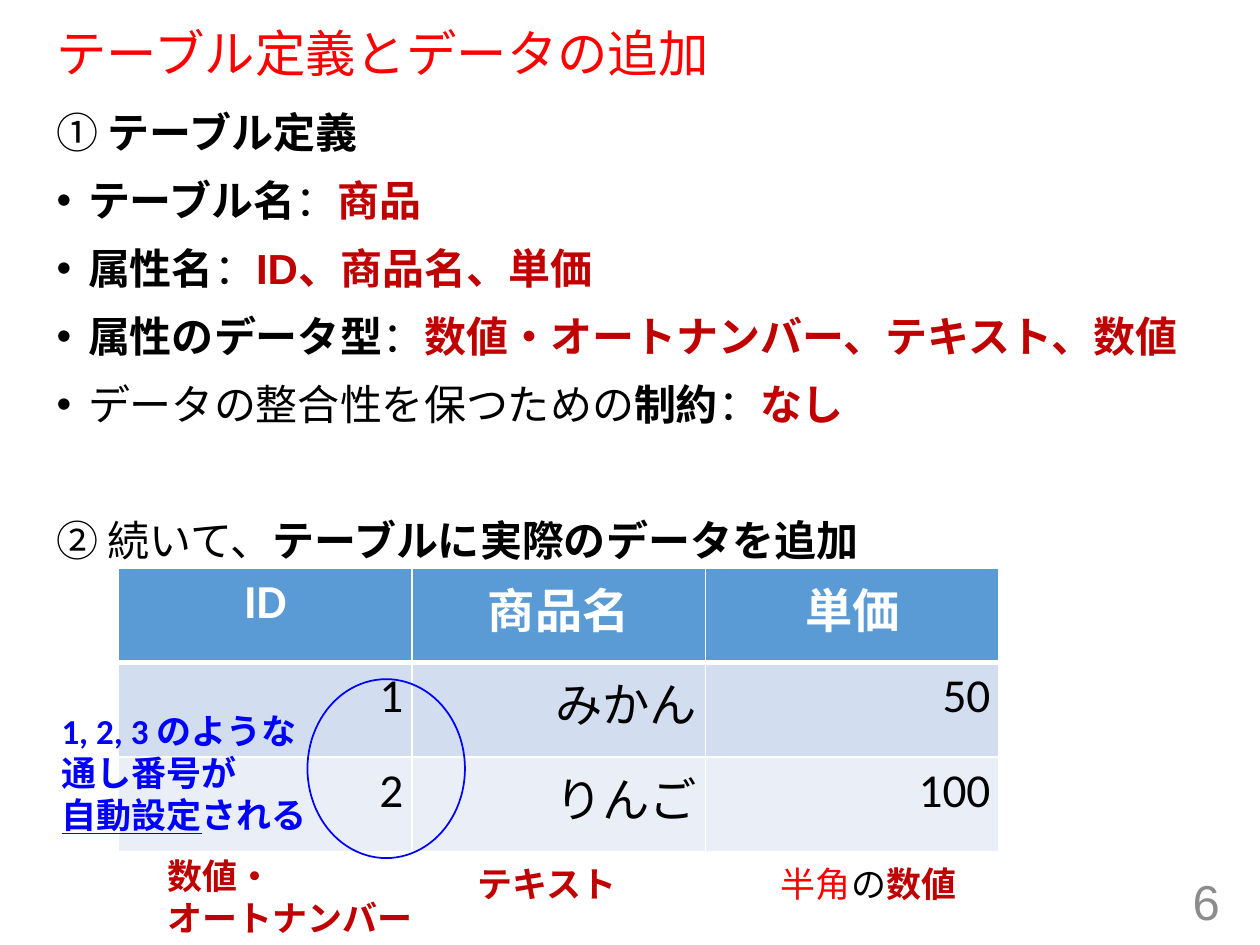
from pptx import Presentation
from pptx.dml.color import RGBColor
from pptx.enum.shapes import MSO_SHAPE
from pptx.enum.text import MSO_ANCHOR, PP_ALIGN
from pptx.oxml import parse_xml
from pptx.oxml.ns import nsdecls
from pptx.util import Inches, Pt

BLACK, RED, DARK, BLUE, WHITE = "000000", "FF0000", "C00000", "0000FF", "FFFFFF"


def color(code):
    return RGBColor.from_string(code)


def write(para, parts, size, face):
    """Add runs given as (text, colour, bold)."""
    for text, code, bold in parts:
        run = para.add_run()
        run.text = text
        font = run.font
        font.size, font.name, font.bold = Pt(size), face, bold
        font.color.rgb = color(code)


deck = Presentation()
deck.slide_width, deck.slide_height = Inches(10), Inches(7.5)
slide = deck.slides.add_slide(deck.slide_layouts[6])
shapes = slide.shapes

# Title
title = shapes.add_textbox(Inches(0.35), Inches(0.19), Inches(9.25), Inches(0.51))
frame = title.text_frame
frame.word_wrap = True
frame.vertical_anchor = MSO_ANCHOR.MIDDLE
para = frame.paragraphs[0]
para.line_spacing = 0.9
write(para, [("テーブル定義とデータの追加", RED, False)], 28.8, "Arial")

# Body: (bulleted, space before, runs)
colon = ("：", BLACK, False)
lines = [
    (False, 10, [("① ", BLACK, False), ("テーブル定義", BLACK, True)]),
    (True, 10, [("テーブル名", BLACK, True), colon, ("商品", DARK, True)]),
    (True, 10, [("属性名", BLACK, True), colon, ("ID、商品名、単価", DARK, True)]),
    (True, 10, [("属性のデータ型", BLACK, True), colon,
                ("数値・オートナンバー、テキスト、数値", DARK, True)]),
    (True, 10, [("データの整合性を保つための", BLACK, False), ("制約", BLACK, True),
                colon, ("なし", DARK, True)]),
    (False, 49, [("② 続いて、", BLACK, False),
                 ("テーブルに実際のデータを追加", BLACK, True)]),
]
body = shapes.add_textbox(Inches(0.35), Inches(0.8), Inches(9.25), Inches(6.43))
frame = body.text_frame
frame.word_wrap = True
for i, (bullet, gap, parts) in enumerate(lines):
    para = frame.add_paragraph() if i else frame.paragraphs[0]
    para.space_before = Pt(gap)
    write(para, parts, 24, "Arial")
    if bullet:
        props = para._p.get_or_add_pPr()
        props.set("marL", str(Inches(0.25)))
        props.set("indent", str(-Inches(0.25)))
        props.append(parse_xml(f'<a:buFont {nsdecls("a")} typeface="Arial"/>'))
        props.append(parse_xml(f'<a:buChar {nsdecls("a")} char="•"/>'))

# Page number
page = shapes.add_textbox(Inches(7.53), Inches(6.95), Inches(2.25), Inches(0.4))
frame = page.text_frame
frame.word_wrap = True
frame.vertical_anchor = MSO_ANCHOR.MIDDLE
frame.paragraphs[0].alignment = PP_ALIGN.RIGHT
write(frame.paragraphs[0], [("6", "8C8C8C", False)], 28, "Arial")

# Product table
rows = [("ID", "商品名", "単価"), ("1", "みかん", "50"), ("2", "りんご", "100")]
fills = ["5B9BD5", "D2DEEF", "EAEFF7"]
table = shapes.add_table(3, 3, Inches(0.94), Inches(4.51),
                         Inches(6.99), Inches(2.25)).table
for col in table.columns:
    col.width = Inches(2.33)
for r, row in enumerate(rows):
    table.rows[r].height = Inches(0.75)
    head = r == 0
    for c, text in enumerate(row):
        cell = table.cell(r, c)
        cell.margin_left = cell.margin_right = Inches(0.07)
        cell.margin_top = cell.margin_bottom = Inches(0.04)
        para = cell.text_frame.paragraphs[0]
        para.alignment = PP_ALIGN.CENTER if head else PP_ALIGN.RIGHT
        write(para, [(text, WHITE if head else BLACK, head)], 27, "Calibri")
        # White borders, thick around the header's lower edge
        widths = {"L": 1, "R": 1, "T": 3 if r == 1 else 1, "B": 3 if head else 1}
        for side, width in widths.items():
            cell._tc.get_or_add_tcPr().append(parse_xml(
                f'<a:ln{side} {nsdecls("a")} w="{Pt(width)}"><a:solidFill>'
                f'<a:srgbClr val="{WHITE}"/></a:solidFill></a:ln{side}>'))
        cell.fill.solid()
        cell.fill.fore_color.rgb = color(fills[r])

# Ring around the ID values
ring = shapes.add_shape(MSO_SHAPE.OVAL, Inches(2.44), Inches(5.39),
                        Inches(1.25), Inches(1.42))
ring.shadow.inherit = False
ring.fill.background()
ring.line.color.rgb = color(BLUE)
ring.line.width = Pt(1)

# Data type labels and the numbering note
notes = [
    (1.23, 6.73, 2.17, 0.77, [[("数値・", DARK, True)],
                              [("オートナンバー", DARK, True)]]),
    (3.69, 6.8, 1.32, 0.44, [[("テキスト", DARK, True)]]),
    (6.1, 6.8, 1.6, 0.44, [[("半角", RED, False), ("の", BLACK, False),
                            ("数値", DARK, True)]]),
    (0.39, 5.58, 2.17, 1.11, [[("1, 2, 3 のような", BLUE, True)],
                              [("通し番号が", BLUE, True)],
                              [("自動設定", BLUE, True), ("される", BLUE, True)]]),
]
for x, y, w, h, paras in notes:
    note = shapes.add_textbox(Inches(x), Inches(y), Inches(w), Inches(h))
    frame = note.text_frame
    frame.word_wrap = False
    for i, parts in enumerate(paras):
        para = frame.add_paragraph() if i else frame.paragraphs[0]
        write(para, parts, 20, "Calibri")
# The last note stresses its first word
para.runs[0].font.underline = True

deck.save("out.pptx")
